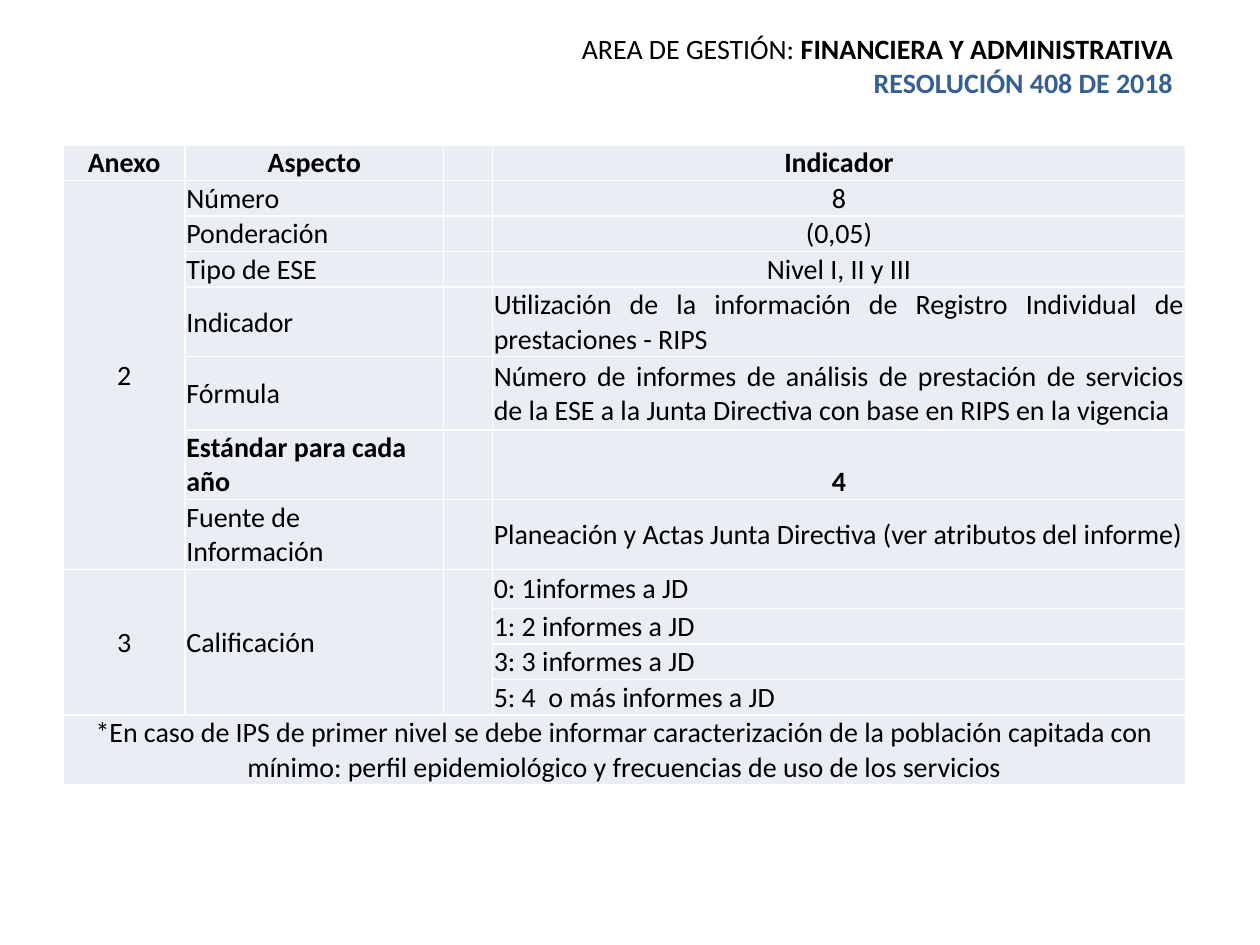
from pptx import Presentation, util as u
from pptx.dml.color import RGBColor
from pptx.enum import text
from pptx.oxml.xmlchemy import OxmlElement

LEFT, CENTER, RIGHT, JUSTIFY = (
    text.PP_ALIGN.LEFT, text.PP_ALIGN.CENTER, text.PP_ALIGN.RIGHT, text.PP_ALIGN.JUSTIFY)
MIDDLE, BOTTOM = text.MSO_ANCHOR.MIDDLE, text.MSO_ANCHOR.BOTTOM

COLUMN_WIDTHS = [0.97, 2.05, 0.39, 5.5]
ROW_HEIGHTS = [0.24] * 4 + [0.47, 0.58, 0.42, 0.42, 0.31] + [0.24] * 3 + [0.47]
MERGES = [((1, 0), (7, 0)), ((12, 0), (12, 3))] + [((8, c), (11, c)) for c in range(3)]

HEADINGS = [(0, "Anexo"), (1, "Aspecto"), (3, "Indicador")]
ASPECTS = [
    ("Número", "8", CENTER, BOTTOM, False),
    ("Ponderación", "(0,05)", CENTER, BOTTOM, False),
    ("Tipo de ESE", "Nivel I, II y III", CENTER, BOTTOM, False),
    ("Indicador", "Utilización de la información de Registro Individual de "
     "prestaciones - RIPS", JUSTIFY, MIDDLE, False),
    ("Fórmula", "Número de informes de análisis de prestación de servicios de la ESE "
     "a la Junta Directiva con base en RIPS en la vigencia", JUSTIFY, MIDDLE, False),
    ("Estándar para cada año", "4", CENTER, BOTTOM, True),
    ("Fuente de Información", "Planeación y Actas Junta Directiva (ver atributos del informe)",
     LEFT, MIDDLE, False),
]
SCORES = ["0: 1informes a JD", "1: 2 informes a JD", "3: 3 informes a JD",
          "5: 4  o más informes a JD"]
NOTE = ("*En caso de IPS de primer nivel se debe informar caracterización de la población "
        "capitada con mínimo: perfil epidemiológico y frecuencias de uso de los servicios")


def color(value):
    """Turn a hex string into a colour."""
    return RGBColor.from_string(value)


class SlideBuilder:
    """Hold the style and the current slide, and add elements to it."""

    font, size = "Calibri", 16
    black, blue, cell_fill = "000000", "376092", "E9EDF4"

    def __init__(self, presentation):
        """Start a title-only slide."""
        self.slide = presentation.slides.add_slide(presentation.slide_layouts[5])

    def run(self, paragraph, words, bold=False, ink=None):
        """Add one styled run."""
        run = paragraph.add_run()
        run.text = words
        run.font.name, run.font.size, run.font.bold = self.font, u.Pt(self.size), bold
        run.font.color.rgb = color(ink or self.black)

    def title(self, left, top, width, height, lines):
        """Place the title and fill it with lines of runs."""
        title = self.slide.shapes.title
        title.left, title.top, title.width, title.height = map(
            u.Inches, (left, top, width, height))
        frame = title.text_frame
        frame.word_wrap, frame.auto_size = True, text.MSO_AUTO_SIZE.NONE
        frame.vertical_anchor = MIDDLE
        for number, runs in enumerate(lines):
            paragraph = frame.add_paragraph() if number else frame.paragraphs[0]
            paragraph.alignment = RIGHT
            for run in runs:
                self.run(paragraph, *run)

    def table(self, left, top, widths, heights, merges):
        """Add an empty filled table with merged cells."""
        table = self.slide.shapes.add_table(
            len(heights), len(widths), u.Inches(left), u.Inches(top),
            u.Inches(sum(widths)), u.Inches(sum(heights))).table
        table.first_row = table.horz_banding = False
        for column, width in zip(table.columns, widths):
            column.width = u.Inches(width)
        for row, height in zip(table.rows, heights):
            row.height = u.Inches(height)
        for cell in table.iter_cells():
            cell.fill.solid()
            cell.fill.fore_color.rgb = color(self.cell_fill)
            cell.margin_left = cell.margin_right = cell.margin_top = u.Inches(0.01)
            cell.margin_bottom = 0
            end = OxmlElement("a:endParaRPr")
            end.set("sz", str(self.size * 100))
            cell.text_frame.paragraphs[0]._p.append(end)
        for first, last in merges:
            table.cell(*first).merge(table.cell(*last))
        return table

    def cell(self, cell, words, align=LEFT, anchor=MIDDLE, bold=False):
        """Write one table cell."""
        cell.vertical_anchor = anchor
        paragraph = cell.text_frame.paragraphs[0]
        paragraph.alignment = align
        self.run(paragraph, words, bold)


def main():
    """Build and save the slide."""
    presentation = Presentation()
    presentation.slide_width, presentation.slide_height = u.Inches(10), u.Inches(7.5)
    builder = SlideBuilder(presentation)
    builder.title(0.51, 0.25, 8.9, 0.54, [
        [("AREA DE GESTIÓN: ",), ("FINANCIERA Y ADMINISTRATIVA", True)],
        [("RESOLUCIÓN 408 DE 2018", True, builder.blue)],
    ])
    table = builder.table(0.5, 1.15, COLUMN_WIDTHS, ROW_HEIGHTS, MERGES)
    for column, heading in HEADINGS:
        builder.cell(table.cell(0, column), heading, CENTER, BOTTOM, True)
    for row, (aspect, value, align, anchor, bold) in enumerate(ASPECTS, 1):
        builder.cell(table.cell(row, 1), aspect, LEFT, anchor, bold)
        builder.cell(table.cell(row, 3), value, align, anchor, bold)
    for row, score in enumerate(SCORES, 8):
        builder.cell(table.cell(row, 3), score)
    builder.cell(table.cell(1, 0), "2", CENTER)
    builder.cell(table.cell(8, 0), "3", CENTER)
    builder.cell(table.cell(8, 1), "Calificación")
    builder.cell(table.cell(12, 0), NOTE, CENTER, BOTTOM)
    presentation.save("out.pptx")


if __name__ == "__main__":
    main()
